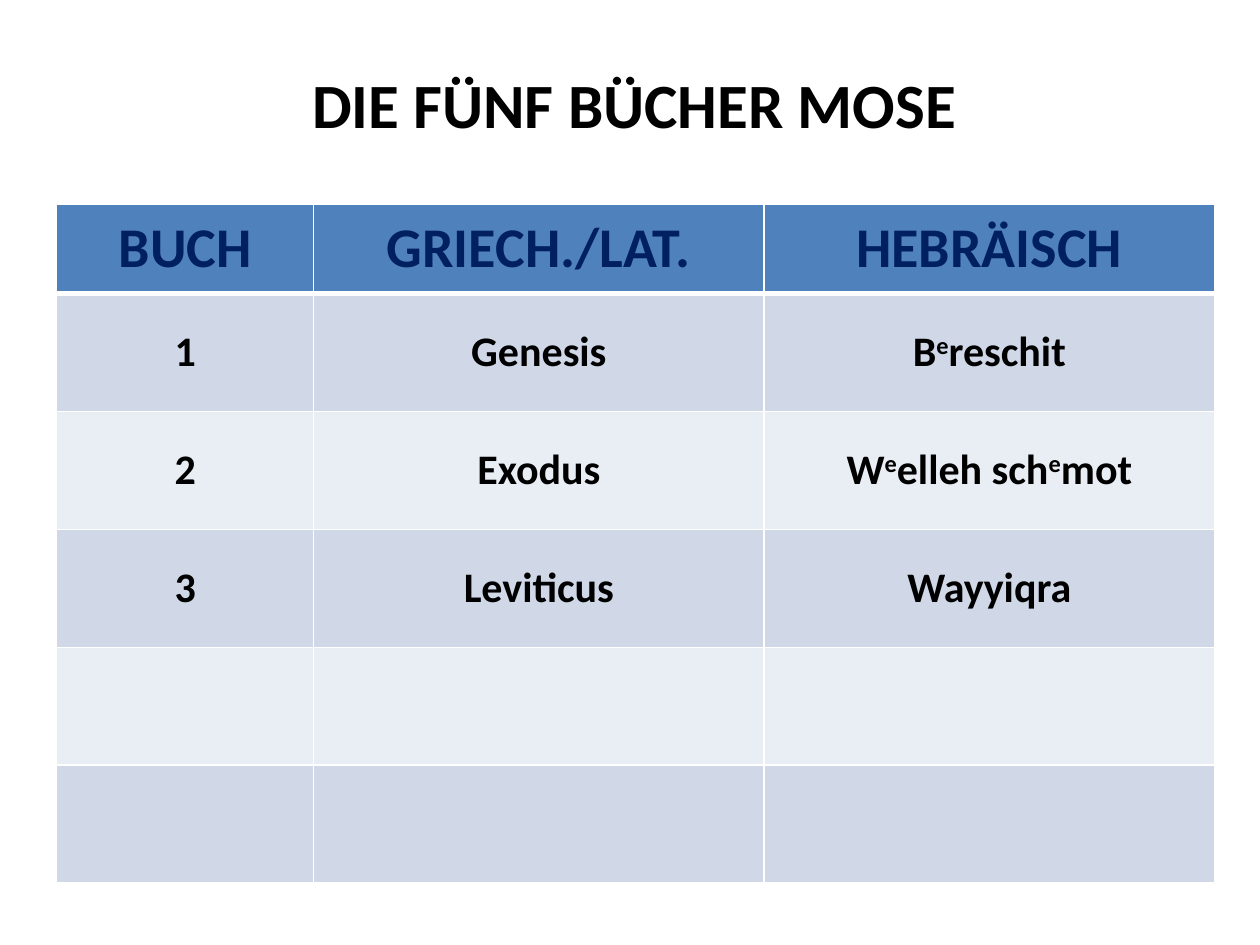
from lxml.etree import SubElement
from pptx import Presentation
from pptx.dml.color import RGBColor
from pptx.enum.shapes import MSO_SHAPE as Shape
from pptx.enum.text import MSO_ANCHOR as Anchor, PP_ALIGN as Align
from pptx.oxml.ns import qn
from pptx.util import Inches, Pt

WHITE = RGBColor(0xFF, 0xFF, 0xFF)
BLACK = RGBColor(0x00, 0x00, 0x00)
NAVY = RGBColor(0x00, 0x20, 0x60)
BLUE = RGBColor(0x4F, 0x81, 0xBD)
BANDS = RGBColor(0xD0, 0xD8, 0xE8), RGBColor(0xE9, 0xED, 0xF4)

TITLE_FONT = {"name": "Calibri", "size": Pt(36), "bold": True}
HEADER_FONT = {"name": "Calibri", "size": Pt(32), "bold": True}
BODY_FONT = {"name": "Calibri", "size": Pt(24), "bold": True}

BOOKS = [
    ("BUCH", "GRIECH./LAT.", "HEBRÄISCH"),
    ("1", "Genesis", "B^e^reschit"),
    ("2", "Exodus", "W^e^elleh sch^e^mot"),
    ("3", "Leviticus", "Wayyiqra"),
    ("", "", ""),
    ("", "", ""),
]


def write_text(frame, text, style, color):
    para = frame.paragraphs[0]
    para.alignment = Align.CENTER
    for index, part in enumerate(text.split("^") if text else []):
        span = para.add_run()
        span.text = part
        for name, value in style.items():
            setattr(span.font, name, value)
        span.font.color.rgb = color
        if index % 2:
            span.font._element.set("baseline", "30000")


def add_title(page, left, top, width, height):
    box = page.shapes.add_shape(Shape.RECTANGLE, left, top, width, height)
    box.shadow.inherit = False
    box.line.fill.background()
    box.fill.solid()
    box.fill.fore_color.rgb = WHITE
    tint = box.fill._xPr.find(".//" + qn("a:srgbClr"))
    SubElement(tint, qn("a:alpha"), val="60000")
    frame = box.text_frame
    frame.word_wrap = True
    frame.vertical_anchor = Anchor.TOP
    frame.margin_top = Inches(0.08)
    write_text(frame, "DIE FÜNF BÜCHER MOSE", TITLE_FONT, BLACK)


def set_borders(cell, widths):
    properties = cell._tc.get_or_add_tcPr()
    for side, points in widths.items():
        line = SubElement(properties, qn(f"a:ln{side}"), w=str(Pt(points)))
        fill = SubElement(line, qn("a:solidFill"))
        SubElement(fill, qn("a:srgbClr"), val=str(WHITE))


def add_book_table(page, left, top, width, height):
    table = page.shapes.add_table(len(BOOKS), 3, left, top, width, height).table
    number_width, header_height = Inches(2.04), Inches(0.71)
    name_width = (width - number_width) // 2
    for column, size in zip(table.columns, (number_width, name_width, name_width)):
        column.width = size
    body_height = (height - header_height) // (len(BOOKS) - 1)
    for row_index, texts in enumerate(BOOKS):
        is_header = row_index == 0
        table.rows[row_index].height = header_height if is_header else body_height
        borders = {"L": 1, "R": 1, "T": 3 if row_index == 1 else 1, "B": 3 if is_header else 1}
        for column_index, text in enumerate(texts):
            cell = table.cell(row_index, column_index)
            set_borders(cell, borders)
            cell.fill.solid()
            cell.fill.fore_color.rgb = BLUE if is_header else BANDS[(row_index - 1) % 2]
            cell.vertical_anchor = Anchor.MIDDLE
            style, color = (HEADER_FONT, NAVY) if is_header else (BODY_FONT, BLACK)
            write_text(cell.text_frame, text, style, color)


def main():
    deck = Presentation()
    deck.slide_width, deck.slide_height = Inches(10), Inches(7.5)
    page = deck.slides.add_slide(deck.slide_layouts[6])
    add_title(page, Inches(0.43), Inches(0.44), Inches(9.21), Inches(0.63))
    add_book_table(page, Inches(0.45), Inches(1.62), Inches(9.19), Inches(5.39))
    deck.save("out.pptx")


if __name__ == "__main__":
    main()
